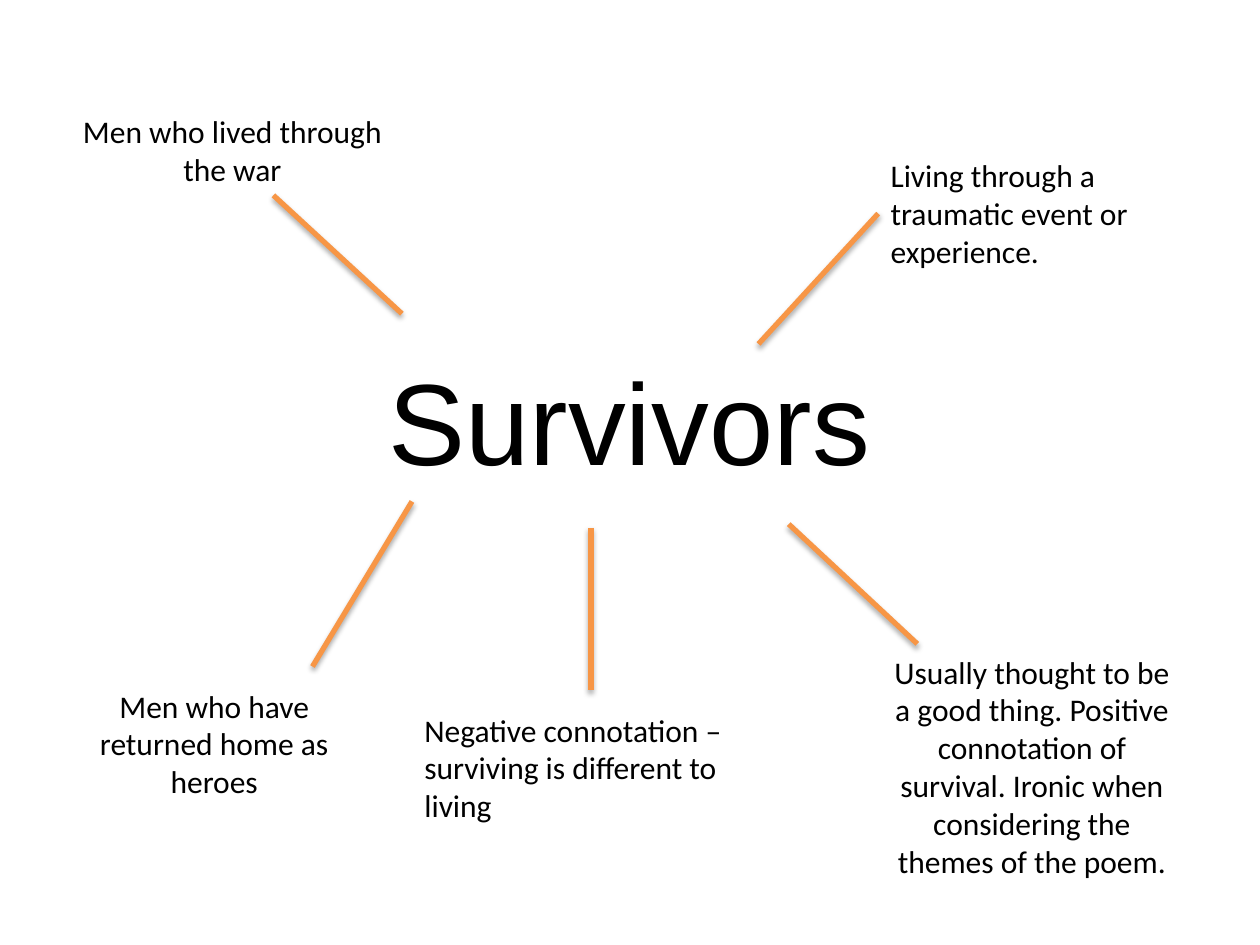
import lxml.etree
import pptx
import pptx.dml.color
import pptx.enum.shapes
import pptx.enum.text
import pptx.oxml.ns
import pptx.util

SLIDE_WIDTH = pptx.util.Inches(10)
SLIDE_HEIGHT = pptx.util.Inches(7.5)
COLUMNS, ROWS = 100, 75
COLORS = {"text": "000000", "spoke": "F79646", "shadow": "000000"}
CENTER = pptx.enum.text.PP_ALIGN.CENTER
LEFT = pptx.enum.text.PP_ALIGN.LEFT
LEFT_SIDE = 1

# Wording, alignment, box (column, row, columns, rows),
# spoke from the topic to the idea (column, row each), joined side
IDEAS = [
    ("Men who lived through the war", CENTER,
     (4.3, 8.4, 28.3, 7.1), (31.9, 24.9), (21.7, 15.5), None),
    ("Men who have returned home as heroes", CENTER,
     (4.4, 54, 25.2, 10.1), (32.7, 39.8), (24.8, 52.9), None),
    ("Living through a traumatic event or experience.", LEFT,
     (69.7, 11.9, 24.4, 10.1), (60.2, 27.3), (69.7, 17), LEFT_SIDE),
    ("Usually thought to be a good thing. Positive connotation of survival. "
     "Ironic when considering the themes of the poem.", CENTER,
     (69.3, 51.3, 25.2, 19.2), (62.6, 41.6), (72.8, 51.1), None),
    ("Negative connotation – surviving is different to living", LEFT,
     (32.7, 55.9, 27.6, 10.1), (46.9, 41.9), (46.9, 54.8), None),
]


def across(columns):
    return round(SLIDE_WIDTH * columns / COLUMNS)


def down(rows):
    return round(SLIDE_HEIGHT * rows / ROWS)


def rgb(name):
    return pptx.dml.color.RGBColor.from_string(COLORS[name])


def add_label(slide, wording, box, alignment, font_name, size):
    column, row, columns, rows = box
    label = slide.shapes.add_textbox(
        across(column), down(row), across(columns), down(rows))
    frame = label.text_frame
    frame.word_wrap = True
    frame.auto_size = pptx.enum.text.MSO_AUTO_SIZE.SHAPE_TO_FIT_TEXT
    paragraph = frame.paragraphs[0]
    paragraph.alignment = alignment
    run = paragraph.add_run()
    run.text = wording
    run.font.name = font_name
    run.font.size = pptx.util.Pt(size)
    run.font.color.rgb = rgb("text")
    return label


def add_soft_shadow(connector):
    qn = pptx.oxml.ns.qn
    effects = lxml.etree.SubElement(
        connector._element.spPr, qn("a:effectLst"))
    shadow = lxml.etree.SubElement(
        effects, qn("a:outerShdw"), blurRad=str(pptx.util.Pt(3.1)),
        dist=str(pptx.util.Pt(1.8)), dir="5400000", rotWithShape="0")
    color = lxml.etree.SubElement(
        shadow, qn("a:srgbClr"), val=COLORS["shadow"])
    lxml.etree.SubElement(color, qn("a:alpha"), val="35000")


def add_spoke(slide, start, end):
    spoke = slide.shapes.add_connector(
        pptx.enum.shapes.MSO_CONNECTOR.STRAIGHT,
        across(start[0]), down(start[1]), across(end[0]), down(end[1]))
    spoke.line.color.rgb = rgb("spoke")
    spoke.line.width = pptx.util.Pt(3)
    add_soft_shadow(spoke)
    return spoke


def main():
    deck = pptx.Presentation()
    deck.slide_width = SLIDE_WIDTH
    deck.slide_height = SLIDE_HEIGHT
    slide = deck.slides.add_slide(deck.slide_layouts[6])

    add_label(slide, "Survivors", (16.1, 27.3, 67.7, 12.1), CENTER, "Arial", 66)
    for wording, alignment, box, start, end, side in IDEAS:
        spoke = add_spoke(slide, start, end)
        idea = add_label(slide, wording, box, alignment, "Calibri", 18)
        if side is not None:
            spoke.end_connect(idea, side)

    deck.save("out.pptx")


if __name__ == "__main__":
    main()
